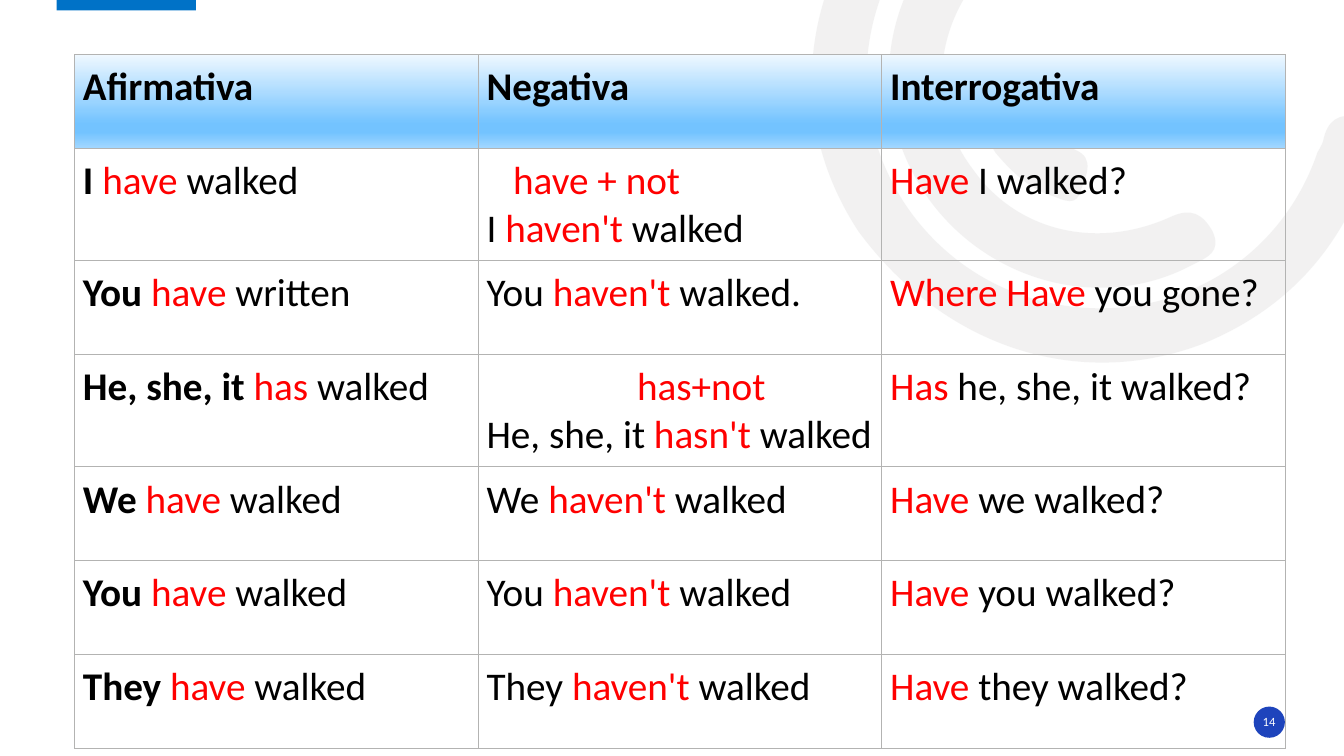
import math

import lxml.etree
import pptx
import pptx.dml.color
import pptx.enum.shapes
import pptx.enum.text
import pptx.oxml.ns
import pptx.util

Pt = pptx.util.Pt
RGBColor = pptx.dml.color.RGBColor
qn = pptx.oxml.ns.qn

BLACK = RGBColor(0x00, 0x00, 0x00)
RED = RGBColor(0xFF, 0x00, 0x00)
WHITE = RGBColor(0xFF, 0xFF, 0xFF)
SWIRL_GREY = RGBColor(0xE7, 0xE6, 0xE6)
TAB_BLUE = RGBColor(0x00, 0x72, 0xC7)
BADGE_BLUE = RGBColor(0x1E, 0x44, 0xBC)
BORDER_GREY = RGBColor(0xB3, 0xB3, 0xB2)
HEADER_STOPS = [
    (0, RGBColor(0xEF, 0xF8, 0xFF)),
    (74, RGBColor(0x73, 0xC3, 0xFF)),
    (83, RGBColor(0x73, 0xC3, 0xFF)),
    (100, RGBColor(0xA2, 0xD7, 0xFF)),
]
SWIRL_ANGLE = 144.2

# Each swirl: frame before turning (left, top, width, height), then its points
# on the slide: a start, and two controls and an end for every Bezier curve
SWIRLS = [
    ((585.4, -145.4, 349.2, 432), [
        (613, 165),
        (575, 107), (567, 36), (603, -36), (641, -109), (703, -146), (785, -149),
        (796, -149), (807, -151), (814, -140), (824, -126), (813, -111), (791, -111),
        (696, -111), (623, -42), (619, 49), (616, 130), (674, 202), (753, 217),
        (835, 233), (914, 188), (941, 109), (942, 107), (944, 104), (945, 101),
        (948, 86), (956, 80), (971, 84), (989, 89), (984, 102), (980, 112),
        (960, 176), (920, 221), (858, 246), (770, 279), (674, 248), (613, 165)]),
    ((648.7, -56.2, 153.4, 306.7), [
        (664, 143),
        (621, 83), (626, 5), (677, -49), (685, -57), (693, -68), (706, -56),
        (716, -46), (718, -36), (705, -23), (666, 19), (662, 78), (695, 121),
        (726, 165), (783, 179), (836, 155), (851, 148), (859, 153), (866, 165),
        (873, 180), (862, 184), (852, 189), (789, 223), (708, 203), (664, 143)]),
    ((705.6, 26.6, 56.2, 131.8), [
        (711, 109),
        (702, 94), (694, 77), (694, 59), (694, 53), (692, 41), (703, 42),
        (714, 42), (729, 38), (732, 55), (735, 79), (746, 95), (768, 107),
        (783, 113), (775, 127), (772, 136), (769, 148), (760, 143), (752, 140),
        (735, 135), (722, 122), (711, 109)]),
]

# Text between bars is red
ROWS = [
    ("Afirmativa", "Negativa", "Interrogativa"),
    ("I |have |walked", "|have + not\nI |haven't |walked", "|Have| I walked?"),
    ("You |have |written", "You |haven't |walked.", "|Where Have |you gone?"),
    ("He, she, it |has| walked", "|has+not\nHe, she, it |hasn't |walked",
     "|Has| he, she, it walked?"),
    ("We |have |walked", "We |haven't |walked", "|Have |we walked?"),
    ("You |have |walked", "You |haven't |walked", "|Have |you walked?"),
    ("They |have |walked", "They |haven't |walked", "|Have |they walked?"),
]
HINT_INDENTS = {"|have + not": Pt(19), "|has+not": Pt(107.5)}


def apply_format(target, values):
    for attribute, value in values.items():
        setattr(target, attribute, value)


def paint(shape, color):
    """Give a shape a flat fill with no outline or shadow."""
    shape.shadow.inherit = False
    shape.fill.solid()
    shape.fill.fore_color.rgb = color
    shape.line.fill.background()


presentation = pptx.Presentation()
apply_format(presentation, {"slide_width": Pt(960), "slide_height": Pt(540)})
slide = presentation.slides.add_slide(presentation.slide_layouts[6])
shapes = slide.shapes

cosine = math.cos(math.radians(SWIRL_ANGLE))
sine = math.sin(math.radians(SWIRL_ANGLE))
for (left, top, width, height), slide_points in SWIRLS:
    middle_x, middle_y = left + width / 2, top + height / 2
    frame_points = []
    for x, y in slide_points:
        dx, dy = x - middle_x, y - middle_y
        frame_points.append((Pt(width / 2 + dx * cosine + dy * sine),
                             Pt(height / 2 - dx * sine + dy * cosine)))
    builder = shapes.build_freeform(*frame_points[0])
    builder.add_line_segments(frame_points[1:], close=True)
    swirl = builder.convert_to_shape()
    apply_format(swirl, {"left": Pt(left), "top": Pt(top), "width": Pt(width),
                         "height": Pt(height), "rotation": SWIRL_ANGLE})
    paint(swirl, SWIRL_GREY)
    swirl_color = swirl._element.spPr.find(qn("a:solidFill")).find(qn("a:srgbClr"))
    lxml.etree.SubElement(swirl_color, qn("a:alpha"), val="53000")

    # Turn the straight outline into Bezier curves measured from the frame
    outline = next(swirl._element.iter(qn("a:path")))
    outline.set("w", str(Pt(width)))
    outline.set("h", str(Pt(height)))
    for segment in list(outline):
        outline.remove(segment)
    for index, (x, y) in enumerate(frame_points):
        if index == 0:
            segment = lxml.etree.SubElement(outline, qn("a:moveTo"))
        elif index % 3 == 1:
            segment = lxml.etree.SubElement(outline, qn("a:cubicBezTo"))
        lxml.etree.SubElement(segment, qn("a:pt"), x=str(x), y=str(y))
    lxml.etree.SubElement(outline, qn("a:close"))

PRESETS = pptx.enum.shapes.MSO_SHAPE
top_tab = shapes.add_shape(PRESETS.RECTANGLE, Pt(40.5), Pt(-1.4), Pt(99.4), Pt(8.8))
paint(top_tab, TAB_BLUE)
badge = shapes.add_shape(PRESETS.OVAL, Pt(895.5), Pt(504.7), Pt(22.3), Pt(22.3))
paint(badge, BADGE_BLUE)

page_number = shapes.add_textbox(Pt(895), Pt(508.3), Pt(23), Pt(14.4)).text_frame
apply_format(page_number, {
    "margin_left": 0, "margin_right": 0, "margin_top": 0, "margin_bottom": 0,
    "word_wrap": True, "vertical_anchor": pptx.enum.text.MSO_ANCHOR.MIDDLE})
number_line = page_number.paragraphs[0]
number_line.alignment = pptx.enum.text.PP_ALIGN.CENTER
number_run = number_line.add_run()
number_run.text = "14"
apply_format(number_run.font, {"name": "Calibri", "size": Pt(9)})
number_run.font.color.rgb = WHITE

conjugation = shapes.add_table(
    len(ROWS), 3, Pt(53.3), Pt(38.9), Pt(864.9), Pt(67 * len(ROWS))).table
apply_format(conjugation, {"first_row": False, "horz_banding": False})
for column in conjugation.columns:
    column.width = Pt(288.3)

for row_index, row in enumerate(ROWS):
    conjugation.rows[row_index].height = Pt(67)
    for column_index, sentence in enumerate(row):
        cell = conjugation.cell(row_index, column_index)
        apply_format(cell, {"margin_left": Pt(6), "margin_right": Pt(6),
                            "margin_top": Pt(6.5), "margin_bottom": Pt(6.5)})
        cell_format = cell._tc.get_or_add_tcPr()
        for edge in ("a:lnL", "a:lnR", "a:lnT", "a:lnB"):
            border = lxml.etree.SubElement(cell_format, qn(edge), w=str(Pt(0.75)))
            border_fill = lxml.etree.SubElement(border, qn("a:solidFill"))
            lxml.etree.SubElement(border_fill, qn("a:srgbClr"), val=str(BORDER_GREY))
        if row_index == 0:
            gradient = lxml.etree.SubElement(cell_format, qn("a:gradFill"), rotWithShape="1")
            stops = lxml.etree.SubElement(gradient, qn("a:gsLst"))
            for percent, color in HEADER_STOPS:
                stop = lxml.etree.SubElement(stops, qn("a:gs"), pos=str(percent * 1000))
                lxml.etree.SubElement(stop, qn("a:srgbClr"), val=str(color))
            lxml.etree.SubElement(gradient, qn("a:lin"), ang="5400000", scaled="0")
        else:
            cell.fill.background()

        body = cell.text_frame
        for line_index, line in enumerate(sentence.split("\n")):
            paragraph = body.add_paragraph() if line_index else body.paragraphs[0]
            if line in HINT_INDENTS:
                paragraph._p.get_or_add_pPr().set("marL", str(HINT_INDENTS[line]))
            for part_index, part in enumerate(line.split("|")):
                if not part:
                    continue
                run = paragraph.add_run()
                run.text = part
                is_subject = column_index == 0 and part_index == 0
                apply_format(run.font, {"name": "Calibri", "size": Pt(28),
                                        "bold": row_index == 0 or is_subject})
                run.font.color.rgb = RED if part_index == 1 else BLACK

presentation.save("out.pptx")
